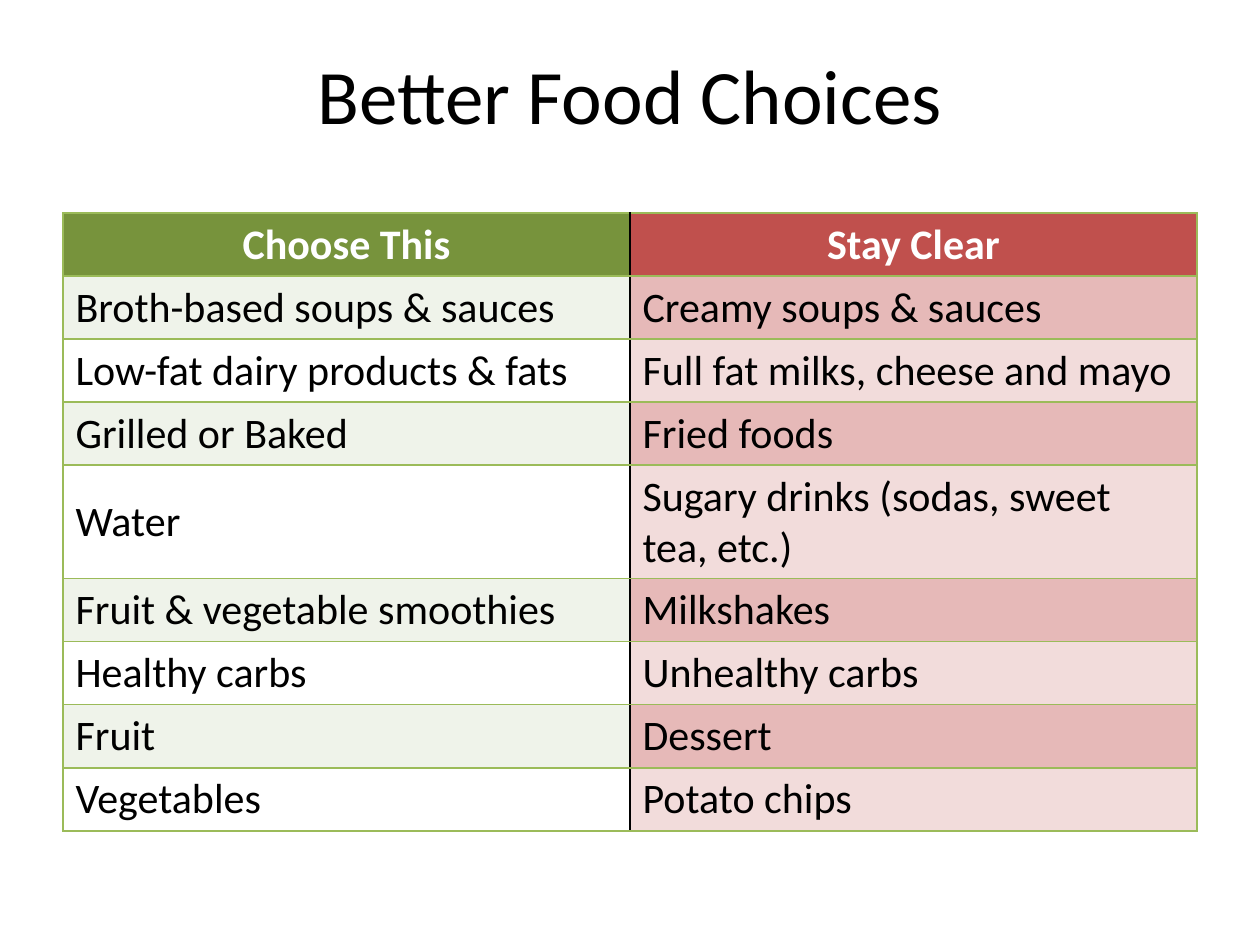
from lxml.etree import SubElement as Sub
from pptx import Presentation
from pptx.dml.color import RGBColor
from pptx.enum.text import MSO_ANCHOR as Anchor, PP_ALIGN as Align
from pptx.oxml.ns import qn
from pptx.util import Inches, Pt


def tint(code):
    return RGBColor.from_string(code)


def write(frame, text, size, color, align, bold=False):
    line = frame.paragraphs[0]
    line.alignment = align
    run = line.add_run()
    run.text = text
    run.font.name = "Calibri"
    run.font.size = Pt(size)
    run.font.bold = bold
    run.font.color.rgb = tint(color)


deck = Presentation()
deck.slide_width = Inches(10)
deck.slide_height = Inches(7.5)
wide, high = deck.slide_width, deck.slide_height
slide = deck.slides.add_slide(deck.slide_layouts[6])

left, span = int(wide * 0.05), int(wide * 0.9)
title = slide.shapes.add_textbox(left, int(high * 0.03), span, Inches(1.03))
title.text_frame.word_wrap = True
title.text_frame.vertical_anchor = Anchor.MIDDLE
write(title.text_frame, "Better Food Choices", 44, "000000", Align.CENTER)

foods = [
    ("Choose This", "Stay Clear"),
    ("Broth-based soups & sauces", "Creamy soups & sauces"),
    ("Low-fat dairy products & fats", "Full fat milks, cheese and mayo"),
    ("Grilled or Baked", "Fried foods"),
    ("Water", "Sugary drinks (sodas, sweet tea, etc.)"),
    ("Fruit & vegetable smoothies", "Milkshakes"),
    ("Healthy carbs", "Unhealthy carbs"),
    ("Fruit", "Dessert"),
    ("Vegetables", "Potato chips"),
]
heads = ("77933C", "C0504D")
bands = (("FFFFFF", "F2DCDB"), ("EFF3EA", "E6B9B8"))
green, black = "9BBB59", "000000"
edges = (
    {"lnL": green, "lnR": black, "lnT": green, "lnB": green},
    {"lnL": black, "lnR": green, "lnT": green, "lnB": green},
)

step = Inches(0.41)
table = slide.shapes.add_table(
    len(foods), 2, left, Inches(1.69), span, step * len(foods)
).table

for r, pair in enumerate(foods):
    head = r == 0
    fills = heads if head else bands[r % 2]
    for c, text in enumerate(pair):
        cell = table.cell(r, c)
        props = cell._tc.get_or_add_tcPr()
        for side, color in edges[c].items():
            edge = Sub(props, qn("a:" + side), w=str(Pt(1)))
            solid = Sub(edge, qn("a:solidFill"))
            Sub(solid, qn("a:srgbClr"), val=color)
        cell.fill.solid()
        cell.fill.fore_color.rgb = tint(fills[c])
        cell.vertical_anchor = Anchor.TOP if head else Anchor.MIDDLE
        ink = "FFFFFF" if head else black
        align = Align.CENTER if head else Align.LEFT
        write(cell.text_frame, text, 24, ink, align, head)

deck.save("out.pptx")
